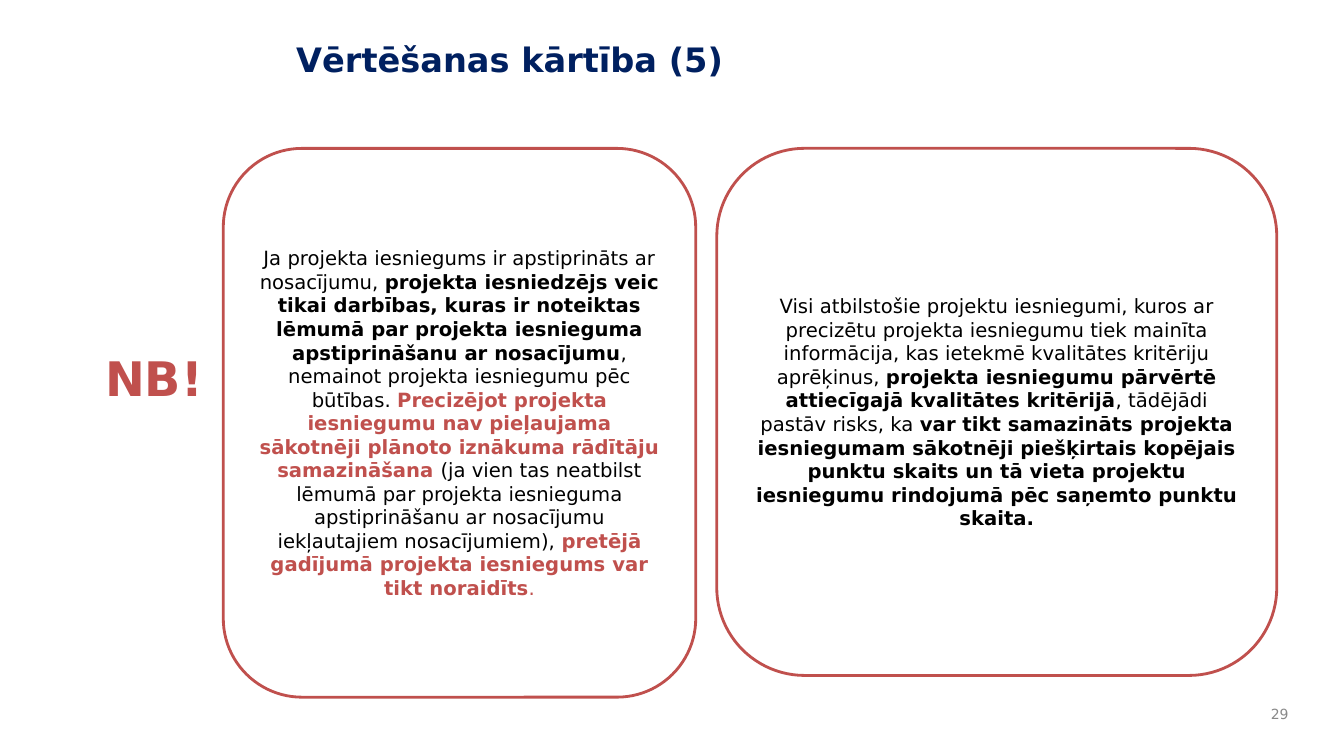
"""Build the slide on the evaluation procedure, part 5."""
from pptx import Presentation
from pptx.dml.color import RGBColor
from pptx.enum.shapes import MSO_SHAPE
from pptx.enum.text import MSO_ANCHOR, PP_ALIGN
from pptx.util import Pt

COLORS = {"navy": "002060", "red": "C0504D", "grey": "898989", "black": "000000", "white": "FFFFFF"}
FONT = "DejaVu Sans"


def color(name):
    return RGBColor.from_string(COLORS[name])


def write(frame, runs, size, align, anchor):
    frame.word_wrap = True
    frame.vertical_anchor = anchor
    paragraph = frame.paragraphs[0]
    paragraph.alignment = align
    for text, tint, bold in runs:
        run = paragraph.add_run()
        run.text = text
        for key, value in {"name": FONT, "size": Pt(size), "bold": bold}.items():
            setattr(run.font, key, value)
        run.font.color.rgb = color(tint)


deck = Presentation()
deck.slide_width, deck.slide_height = Pt(960), Pt(540)
slide = deck.slides.add_slide(deck.slide_layouts[6])

labels = [
    ("Vērtēšanas kārtība (5)", (204.5, 24, 708, 84), 24, "navy", True, PP_ALIGN.LEFT, MSO_ANCHOR.TOP),
    ("29", (896, 498.5, 31.5, 23.5), 10, "grey", False, PP_ALIGN.RIGHT, MSO_ANCHOR.MIDDLE),
    ("NB!", (68, 246, 117, 48), 34, "red", True, PP_ALIGN.LEFT, MSO_ANCHOR.TOP),
]
for text, place, size, tint, bold, align, anchor in labels:
    label = slide.shapes.add_textbox(*map(Pt, place))
    write(label.text_frame, [(text, tint, bold)], size, align, anchor)

conditions = [
    ("Ja projekta iesniegums ir apstiprināts ar nosacījumu, ", "black", False),
    ("projekta iesniedzējs veic tikai darbības, kuras ir noteiktas lēmumā par projekta "
     "iesnieguma apstiprināšanu ar nosacījumu", "black", True),
    (", nemainot projekta iesniegumu pēc būtības. ", "black", False),
    ("Precizējot projekta iesniegumu nav pieļaujama sākotnēji plānoto iznākuma rādītāju "
     "samazināšana ", "red", True),
    ("(ja vien tas neatbilst lēmumā par projekta iesnieguma apstiprināšanu ar nosacījumu "
     "iekļautajiem nosacījumiem), ", "black", False),
    ("pretējā gadījumā projekta iesniegums var tikt noraidīts", "red", True),
    (".", "red", False),
]
rescoring = [
    ("Visi atbilstošie projektu iesniegumi, kuros ar precizētu projekta iesniegumu tiek mainīta "
     "informācija, kas ietekmē kvalitātes kritēriju aprēķinus, ", "black", False),
    ("projekta iesniegumu pārvērtē attiecīgajā kvalitātes kritērijā", "black", True),
    (", tādējādi pastāv risks, ka ", "black", False),
    ("var tikt samazināts projekta iesniegumam sākotnēji piešķirtais kopējais punktu skaits un tā "
     "vieta projektu iesniegumu rindojumā pēc saņemto punktu skaita.", "black", True),
]
panels = [(conditions, 159.5, 337.5, 392), (rescoring, 512, 400, 376.5)]
for runs, left, width, height in panels:
    panel = slide.shapes.add_shape(
        MSO_SHAPE.ROUNDED_RECTANGLE, Pt(left), Pt(106), Pt(width), Pt(height))
    panel.shadow.inherit = False
    panel.fill.solid()
    panel.fill.fore_color.rgb = color("white")
    panel.line.color.rgb = color("red")
    panel.line.width = Pt(2)
    write(panel.text_frame, runs, 14, PP_ALIGN.CENTER, MSO_ANCHOR.MIDDLE)

deck.save("out.pptx")
